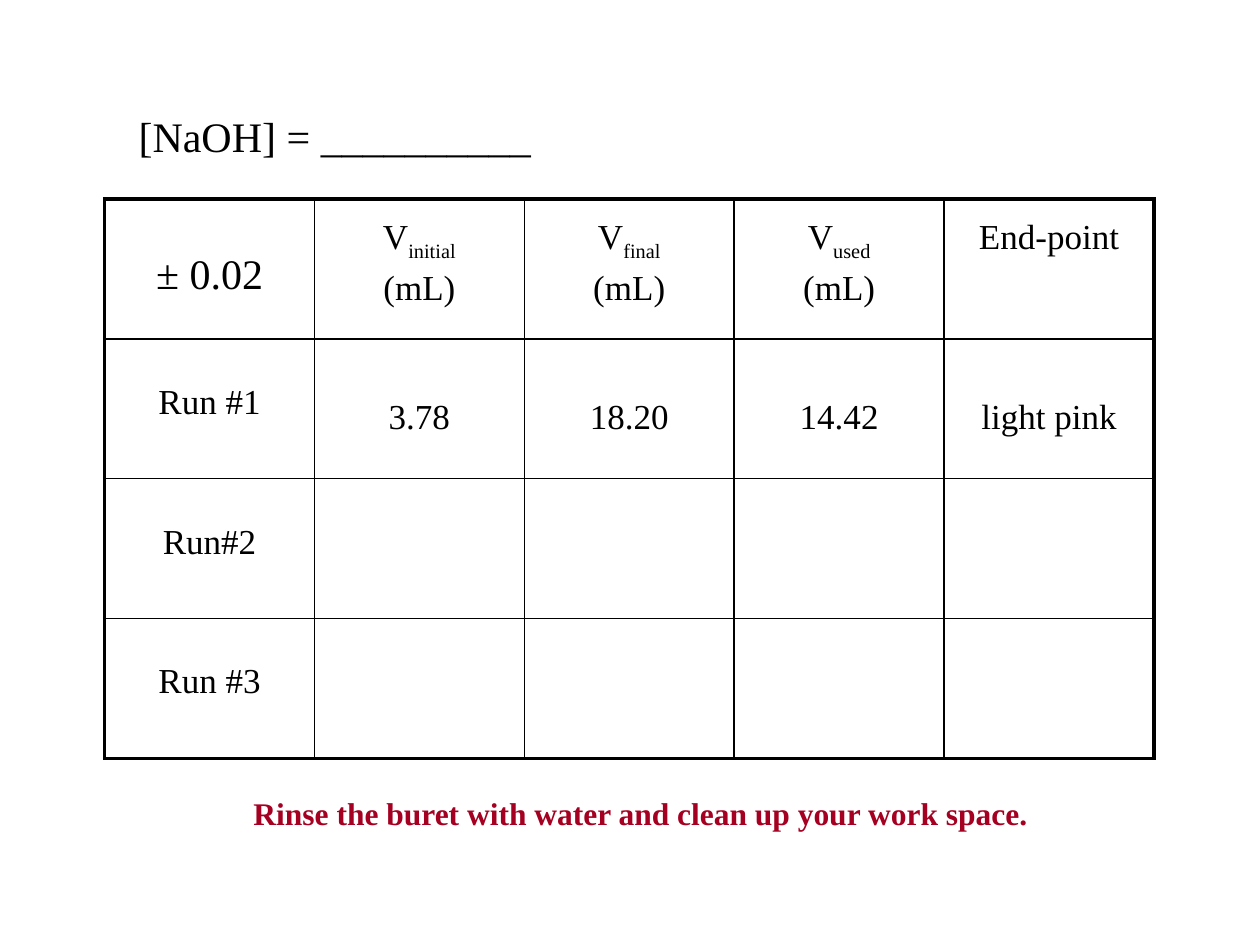
from lxml.etree import SubElement
from pptx import Presentation
from pptx.dml.color import RGBColor
from pptx.enum.text import MSO_ANCHOR as Anchor, PP_ALIGN as Align
from pptx.oxml.ns import qn
from pptx.util import Inches, Pt

BLACK, RED = "000000", "A50021"
FONT = "Times New Roman"
COLUMNS = ["initial", "final", "used"]
ROWS = [
    ["± 0.02", *[[("V", name), ("(mL)", "")] for name in COLUMNS], "End-point"],
    ["Run #1", "3.78", "18.20", "14.42", "light pink"],
    ["Run#2", "", "", "", ""],
    ["Run #3", "", "", "", ""],
]


def color(value):
    """Turn a hex string into a colour."""
    return RGBColor.from_string(value)


def apply_format(target, values):
    """Set each attribute in values on the target."""
    for name, value in values.items():
        setattr(target, name, value)


def add_span(para, text, size, hue=BLACK, bold=False):
    """Add a formatted run to a paragraph and return it."""
    span = para.add_run()
    span.text = text
    apply_format(span.font, {"name": FONT, "size": Pt(size), "bold": bold})
    span.font.color.rgb = color(hue)
    return span


def set_border(cell, side, width):
    """Draw one side of a cell as a black line."""
    line = SubElement(cell._tc.get_or_add_tcPr(), qn(f"a:ln{side}"), w=str(Pt(width)))
    fill = SubElement(line, qn("a:solidFill"))
    SubElement(fill, qn("a:srgbClr"), val=BLACK)


def fill_cell(cell, content, size, spacing):
    """Write the lines of a cell, with a subscript where one is given."""
    lines = [(content, "")] if isinstance(content, str) else content
    for index, (text, subscript) in enumerate(lines):
        para = cell.text_frame.paragraphs[0] if index == 0 else cell.text_frame.add_paragraph()
        apply_format(para, {"alignment": Align.CENTER, "line_spacing": spacing})
        if index:
            para.space_before = Pt(4)
        if text:
            add_span(para, text, size)
        if subscript:
            span = add_span(para, subscript, size)
            span.font._element.set("baseline", "-25000")


def add_results(page, box):
    """Add the titration table in the given box."""
    last_row, last_column = len(ROWS) - 1, len(ROWS[0]) - 1
    table = page.shapes.add_table(len(ROWS), len(ROWS[0]), *box).table
    apply_format(table, {"first_row": False, "horz_banding": False})
    for column in table.columns:
        column.width = int(box[2] / len(ROWS[0]))
    for row in table.rows:
        row.height = int(box[3] / len(ROWS))
    for r, contents in enumerate(ROWS):
        for c, content in enumerate(contents):
            cell = table.cell(r, c)
            corner, run_label = r == c == 0, r > 0 and c == 0
            apply_format(cell, {
                "margin_left": Inches(0.1),
                "margin_right": Inches(0.1),
                "margin_top": Inches(0.35 if run_label else 0.15),
                "margin_bottom": Inches(0.05),
                "vertical_anchor": Anchor.MIDDLE if corner else Anchor.TOP,
            })
            edges = {"L": c == 0, "R": c == last_column, "T": r == 0, "B": r == last_row}
            for side, outer in edges.items():
                set_border(cell, side, 2.25 if outer else 1)
            cell.fill.background()
            fill_cell(cell, content, 24 if corner else 20, 2.05 if r and c else 1.0)


def add_concentration(page, box):
    """Place the concentration line in the title placeholder."""
    title = page.shapes.title
    apply_format(title, dict(zip(("left", "top", "width", "height"), box)))
    apply_format(title.text_frame, {"word_wrap": True, "vertical_anchor": Anchor.TOP})
    para = title.text_frame.paragraphs[0]
    para.alignment = Align.LEFT
    add_span(para, "[NaOH] = __________", 24)


def add_reminder(page, box):
    """Add the clean-up reminder in the given box."""
    frame = page.shapes.add_textbox(*box).text_frame
    frame.word_wrap = True
    para = frame.paragraphs[0]
    para.alignment = Align.CENTER
    add_span(para, "Rinse the buret with water and clean up your work space.", 18, RED, True)


def main():
    """Build and save the deck."""
    deck = Presentation()
    apply_format(deck, {"slide_width": Inches(10), "slide_height": Inches(7.5)})
    page = deck.slides.add_slide(deck.slide_layouts[5])
    add_results(page, [Inches(n) for n in (0.83, 1.58, 8.33, 4.44)])
    add_concentration(page, [Inches(n) for n in (1, 0.83, 3.67, 0.5)])
    add_reminder(page, [Inches(n) for n in (0.5, 6.25, 9.17, 0.4)])
    deck.save("out.pptx")


if __name__ == "__main__":
    main()
